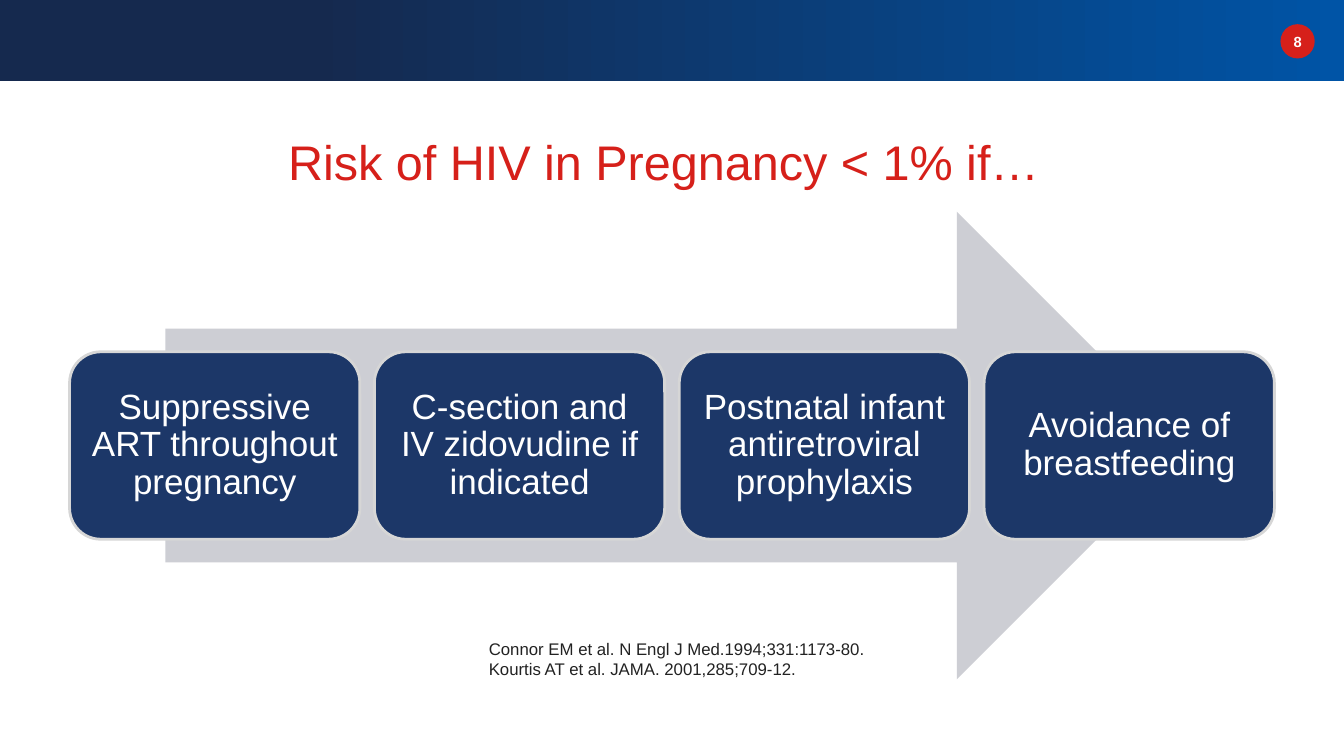
"""Build the slide on keeping HIV risk in pregnancy below one percent."""
from pptx import Presentation, util as u
from pptx.dml.color import RGBColor
from pptx.enum import shapes, text

TITLE = "Risk of HIV in Pregnancy < 1% if…"
NUMBER = "8"
MEASURES = [
    "Suppressive ART throughout pregnancy",
    "C-section and IV zidovudine if indicated",
    "Postnatal infant antiretroviral prophylaxis",
    "Avoidance of breastfeeding",
]
REFERENCES = [
    "Connor EM et al. N Engl J Med.1994;331:1173-80.",
    "Kourtis AT et al. JAMA. 2001,285;709-12.",
]

FONT = "Arial"
WHITE = RGBColor(0xFF, 0xFF, 0xFF)
RED = RGBColor(0xD6, 0x20, 0x1A)
INK = RGBColor(0x22, 0x22, 0x22)
CARD = RGBColor(0x1C, 0x37, 0x68)
CARD_EDGE = RGBColor(0xD6, 0xD6, 0xD6)
ARROW = RGBColor(0xCD, 0xCE, 0xD4)
BANNER = [(0.23, RGBColor(0x15, 0x29, 0x4E)), (1.0, RGBColor(0x00, 0x54, 0xA6))]

WIDTH, HEIGHT = 13.33, 7.5
ROW_LEFT, ROW_WIDTH = 0.69, 11.95
CARD_TOP, CARD_HEIGHT = 3.49, 1.86
GAP_SHARE = 0.05


def add_panel(slide, preset, box, fill=None, edge=None):
    panel = slide.shapes.add_shape(preset, *map(u.Inches, box))
    panel.shadow.inherit = False
    if fill is not None:
        panel.fill.solid()
        panel.fill.fore_color.rgb = fill
    if edge is None:
        panel.line.fill.background()
    else:
        panel.line.color.rgb = edge
        panel.line.width = u.Pt(2)
    return panel


def write(holder, lines, size, color, bold=False, align=text.PP_ALIGN.CENTER,
          anchor=text.MSO_ANCHOR.MIDDLE, wrap=True, spacing=1.0, inset=(0.1, 0.05)):
    frame = holder.text_frame
    frame.word_wrap = wrap
    frame.vertical_anchor = anchor
    frame.margin_left = frame.margin_right = u.Inches(inset[0])
    frame.margin_top = frame.margin_bottom = u.Inches(inset[1])
    frame.text = "\n".join(lines)
    for paragraph in frame.paragraphs:
        paragraph.alignment = align
        paragraph.line_spacing = spacing
        font = paragraph.runs[0].font
        font.name, font.size, font.bold = FONT, u.Pt(size), bold
        font.color.rgb = color


def add_text(slide, box, lines, **formats):
    write(slide.shapes.add_textbox(*map(u.Inches, box)), lines, **formats)


def main():
    deck = Presentation()
    deck.slide_width, deck.slide_height = u.Inches(WIDTH), u.Inches(HEIGHT)
    slide = deck.slides.add_slide(deck.slide_layouts[6])
    preset = shapes.MSO_SHAPE

    banner = add_panel(slide, preset.RECTANGLE, (0, 0, WIDTH, 0.8))
    banner.fill.gradient()
    banner.fill.gradient_angle = 0
    for stop, (position, color) in zip(banner.fill.gradient_stops, BANNER):
        stop.position = position
        stop.color.rgb = color

    badge = add_panel(slide, preset.OVAL, (12.7, 0.24, 0.34, 0.34), RED)
    write(badge, [NUMBER], size=10.5, color=WHITE, bold=True, inset=(0, 0))

    add_text(slide, (0.68, 1.24, 11.81, 0.71), [TITLE], size=34.7, color=RED)

    add_panel(slide, preset.RIGHT_ARROW, (1.64, 2.1, 10.17, 4.64), ARROW)
    count = len(MEASURES)
    card_width = ROW_WIDTH / (count + (count - 1) * GAP_SHARE)
    for column, measure in enumerate(MEASURES):
        left = ROW_LEFT + column * card_width * (1 + GAP_SHARE)
        card = add_panel(slide, preset.ROUNDED_RECTANGLE,
                         (left, CARD_TOP, card_width, CARD_HEIGHT), CARD, CARD_EDGE)
        write(card, [measure], size=25, color=WHITE, spacing=0.9, inset=(0.1, 0.1))

    add_text(slide, (4.75, 6.29, 3.96, 0.91), REFERENCES, size=12, color=INK,
             align=text.PP_ALIGN.LEFT, anchor=text.MSO_ANCHOR.TOP, wrap=False)

    deck.save("out.pptx")


if __name__ == "__main__":
    main()
